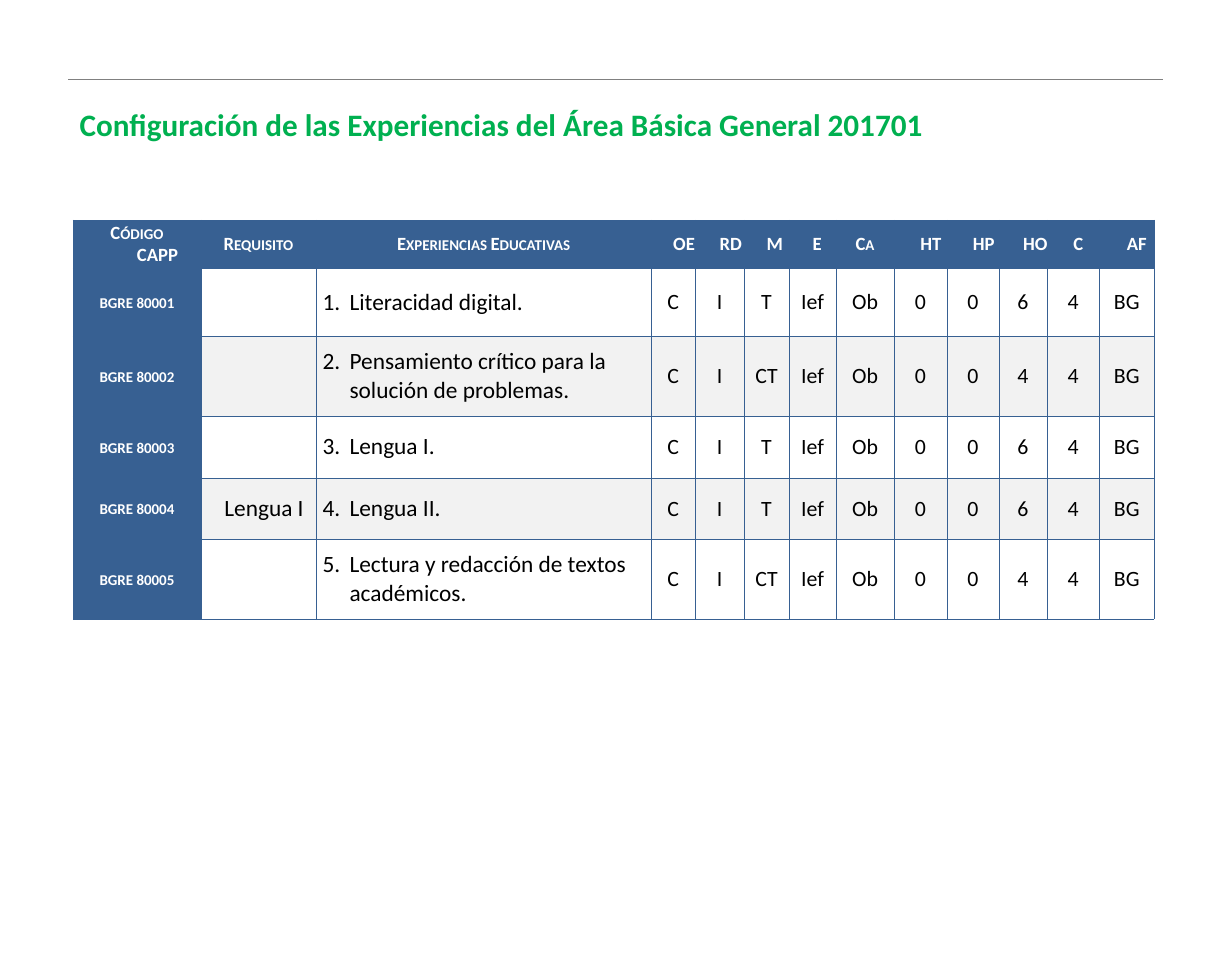
"""Builds the slide on the general basic area courses."""
from lxml.etree import SubElement as Sub
from pptx import Presentation
from pptx.dml.color import RGBColor as RGB
from pptx.enum.shapes import MSO_CONNECTOR as Link
from pptx.enum.text import MSO_ANCHOR as Anchor, MSO_AUTO_SIZE as Fit, PP_ALIGN as Align
from pptx.oxml import parse_xml
from pptx.oxml.ns import nsdecls, qn
from pptx.util import Pt


class Theme:
    face = "Calibri"
    green = RGB.from_string("00B050")
    blue = RGB.from_string("376092")
    gray = RGB.from_string("808080")
    band = RGB.from_string("F2F2F2")
    white = RGB.from_string("FFFFFF")
    black = RGB.from_string("000000")
    title, head, course, mark = 20, 12, 15, 14


def write(para, text, size, color, bold=False, small=False):
    run = para.add_run()
    run.text = text
    font = run.font
    font.name, font.size, font.bold = Theme.face, Pt(size), bold
    font.color.rgb = color
    if small:
        run._r.get_or_add_rPr().set("cap", "small")


def dress(cell, fill):
    cell.vertical_anchor = Anchor.MIDDLE
    cell.margin_left = cell.margin_right = Pt(0.7)
    cell.margin_top = cell.margin_bottom = Pt(0.7)
    cell.fill.solid()
    cell.fill.fore_color.rgb = fill
    props = cell._tc.get_or_add_tcPr()
    for spot, side in enumerate(("lnL", "lnR", "lnT", "lnB")):
        props.insert(spot, parse_xml(
            f'<a:{side} {nsdecls("a")} w="{Pt(0.25)}"><a:solidFill>'
            f'<a:srgbClr val="{Theme.blue}"/></a:solidFill></a:{side}>'))


deck = Presentation()
deck.slide_width, deck.slide_height = Pt(791.28), Pt(612.72)
slide = deck.slides.add_slide(deck.slide_layouts[5])

rule = slide.shapes.add_connector(Link.STRAIGHT, Pt(44), Pt(51), Pt(747), Pt(51))
rule.line.color.rgb = Theme.gray
rule.line.width = Pt(0.75)
Sub(rule._element.spPr, qn("a:effectLst"))

title = slide.shapes.title
title.left, title.top, title.width, title.height = Pt(44), Pt(57), Pt(695), Pt(45)
frame = title.text_frame
frame.word_wrap, frame.auto_size = True, Fit.NONE
frame.vertical_anchor = Anchor.MIDDLE
para = frame.paragraphs[0]
para.alignment = Align.LEFT
write(para, "Configuración de las Experiencias del Área Básica General 201701",
      Theme.title, Theme.green, True)

heads = [["Código", "CAPP"], ["Requisito"], ["Experiencias Educativas"], ["OE"],
         ["RD"], ["M"], ["E"], ["Ca"], ["HT"], ["HP"], ["HO"], ["C"], ["AF"]]
wides = [82, 74, 215.3, 28.3, 31.2, 29.2, 30, 37.4, 33.8, 33.5, 31, 33.6, 35.2]
talls = [31, 43.9, 51.1, 39.6, 39.6, 51.1]
courses = [
    ("", "Literacidad digital.", "T", "6"),
    ("", "Pensamiento crítico para la solución de problemas.", "CT", "4"),
    ("", "Lengua I.", "T", "6"),
    ("Lengua I", "Lengua II.", "T", "6"),
    ("", "Lectura y redacción de textos académicos.", "CT", "4"),
]

grid = slide.shapes.add_table(len(talls), len(wides), Pt(47), Pt(141.3),
                              Pt(sum(wides)), Pt(sum(talls))).table
grid.first_row = grid.horz_banding = False
for col, wide in zip(grid.columns, wides):
    col.width = Pt(wide)
for row, tall in zip(grid.rows, talls):
    row.height = Pt(tall)

for at, lines in enumerate(heads):
    cell = grid.cell(0, at)
    dress(cell, Theme.blue)
    frame = cell.text_frame
    for nth, text in enumerate(lines):
        para = frame.add_paragraph() if nth else frame.paragraphs[0]
        para.alignment = Align.CENTER
        write(para, text, Theme.head, Theme.white, True, True)

for num, (need, name, mode, hours) in enumerate(courses, 1):
    texts = [f"bgre 8000{num}", need, name, "C", "I", mode, "Ief", "Ob",
             "0", "0", hours, "4", "BG"]
    for at, text in enumerate(texts):
        cell = grid.cell(num, at)
        fill = Theme.white if num % 2 else Theme.band
        dress(cell, fill if at else Theme.blue)
        if not text:
            continue
        para = cell.text_frame.paragraphs[0]
        props = para._p.get_or_add_pPr()
        if at == 2:
            props.set("marL", str(Pt(20.9)))
            props.set("indent", str(Pt(-17.3)))
            Sub(props, qn("a:buAutoNum"), type="arabicPeriod", startAt=str(num))
        else:
            para.alignment = Align.CENTER
        if at == 0:
            write(para, text, Theme.head, Theme.white, True, True)
        elif at < 3:
            write(para, text, Theme.course, Theme.black)
        else:
            write(para, text, Theme.mark, Theme.black)
        if at == 1:
            props.set("marL", str(Pt(7.2)))

deck.save("out.pptx")
